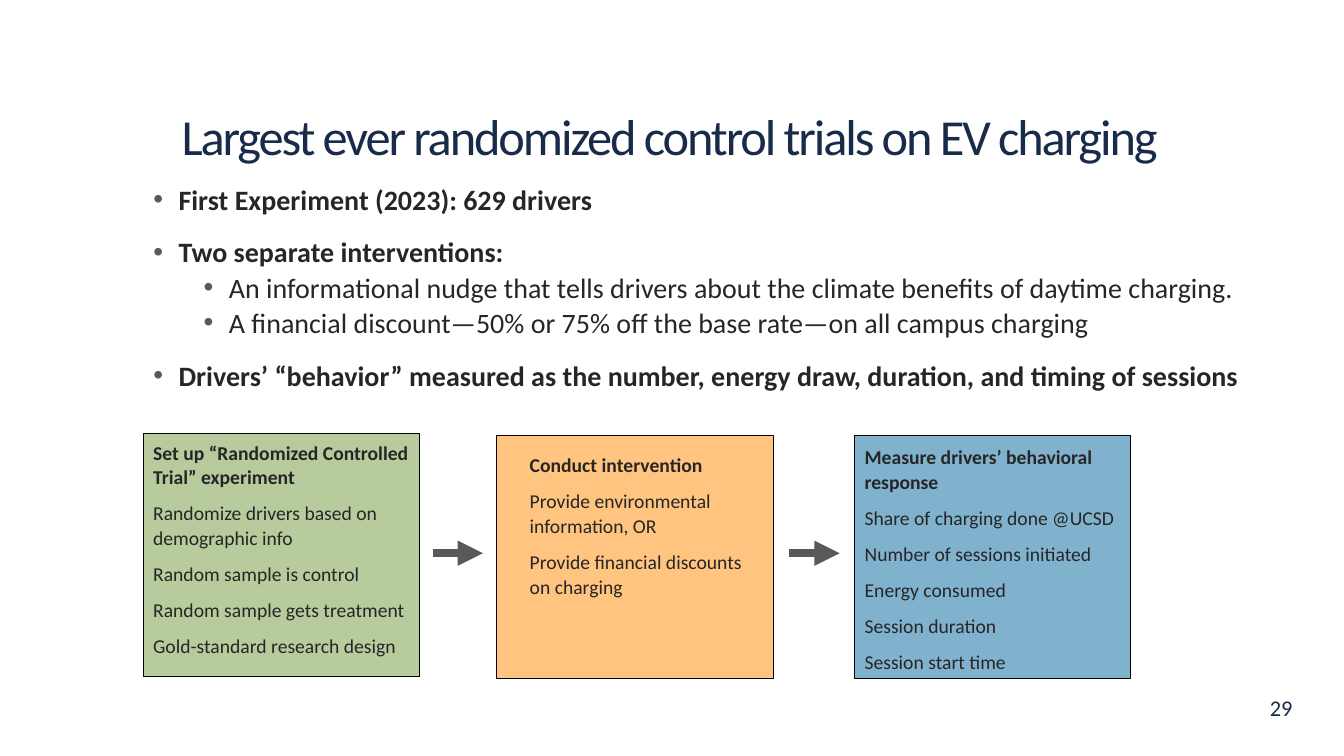
from lxml.etree import SubElement
from pptx import Presentation
from pptx.dml.color import RGBColor
from pptx.enum.shapes import MSO_CONNECTOR, MSO_SHAPE
from pptx.enum.text import MSO_ANCHOR, MSO_AUTO_SIZE, PP_ALIGN
from pptx.oxml.ns import qn
from pptx.util import Cm, Pt

NAVY = RGBColor(0x18, 0x2B, 0x49)
INK = RGBColor(0x26, 0x26, 0x26)
GRAY = RGBColor(0x59, 0x59, 0x59)
BLACK = RGBColor(0, 0, 0)
GREEN = RGBColor(0xB7, 0xCB, 0x9D)
ORANGE = RGBColor(0xFE, 0xC4, 0x80)
BLUE = RGBColor(0x80, 0xB1, 0xCD)

TITLE = "Largest ever randomized control trials on EV charging"
# Each point: level, bold, text
POINTS = [
    (0, True, "First Experiment (2023): 629 drivers"),
    (0, True, "Two separate interventions:"),
    (1, False, "An informational nudge that tells drivers about the climate "
               "benefits of daytime charging."),
    (1, False, "A financial discount—50% or 75% off the base rate—on all "
               "campus charging"),
    (0, True, "Drivers’ “behavior” measured as the number, energy draw, "
              "duration, and timing of sessions"),
]
CARD_W, CARD_H = 6.96, 6.12
# Each card: left, top, fill, text inset (x, y), text size, lines
CARDS = [
    (3.61, 10.92, GREEN, (0, 0.03), (CARD_W, 5.77), [
        "Set up “Randomized Controlled Trial” experiment",
        "Randomize drivers based on demographic info",
        "Random sample is control",
        "Random sample gets treatment",
        "Gold-standard research design"]),
    (12.52, 10.97, ORANGE, (0.58, 0.3), (6.12, 3.71), [
        "Conduct intervention",
        "Provide environmental information, OR",
        "Provide financial discounts on charging"]),
    (21.54, 10.97, BLUE, (0, 0.1), (CARD_W, 5.97), [
        "Measure drivers’ behavioral response",
        "Share of charging done @UCSD",
        "Number of sessions initiated",
        "Energy consumed",
        "Session duration",
        "Session start time"]),
]
ARROWS = [10.9, 19.89]
ARROW_Y, ARROW_W = 13.94, 1.27


def place(shape, left, top, width, height):
    shape.left, shape.top = Cm(left), Cm(top)
    shape.width, shape.height = Cm(width), Cm(height)


def write(para, text, size, color=INK, bold=False, align=PP_ALIGN.LEFT,
          line=1.0, before=0, after=0, track=0):
    """Fill a paragraph; track is letter spacing in points."""
    para.alignment = align
    para.line_spacing = line
    para.space_before, para.space_after = Pt(before), Pt(after)
    run = para.add_run()
    run.text = text
    font = run.font
    font.name, font.size, font.bold = "Calibri", Pt(size), bold
    font.color.rgb = color
    if track:
        run._r.get_or_add_rPr().set("spc", str(int(track * 100)))


def paras(frame, items):
    """Pair each item with a paragraph of the frame."""
    for i, item in enumerate(items):
        yield i, frame.paragraphs[0] if i == 0 else frame.add_paragraph(), item


def bullet(para, level):
    para.level = level
    props = para._p.get_or_add_pPr()
    props.set("marL", str(Cm(0.635 + 1.27 * level)))
    props.set("indent", str(-Cm(0.635)))
    tint = SubElement(props, qn("a:buClr"))
    SubElement(tint, qn("a:srgbClr")).set("val", str(GRAY))
    SubElement(props, qn("a:buFont")).set("typeface", "Arial")
    SubElement(props, qn("a:buChar")).set("char", "•")


def add_title(slide, *box):
    title = slide.shapes.title
    place(title, *box)
    frame = title.text_frame
    frame.auto_size = MSO_AUTO_SIZE.NONE
    frame.vertical_anchor = MSO_ANCHOR.MIDDLE
    write(frame.paragraphs[0], TITLE, 36, color=NAVY, line=0.9, track=-1.5)


def add_points(slide, *box):
    body = slide.placeholders[1]
    place(body, *box)
    frame = body.text_frame
    frame.auto_size = MSO_AUTO_SIZE.NONE
    for i, para, (level, bold, text) in paras(frame, POINTS):
        bullet(para, level)
        gap = 12.5 if i and level == 0 else 0
        write(para, text, 20, bold=bold, line=1.05, before=gap)


def add_card(slide, left, top, fill, inset, size, lines):
    card = slide.shapes.add_shape(MSO_SHAPE.RECTANGLE, Cm(left), Cm(top),
                                  Cm(CARD_W), Cm(CARD_H))
    card.shadow.inherit = False
    card.fill.solid()
    card.fill.fore_color.rgb = fill
    card.line.color.rgb = BLACK
    card.line.width = Pt(0.5)
    label = slide.shapes.add_textbox(Cm(left + inset[0]), Cm(top + inset[1]),
                                     Cm(size[0]), Cm(size[1]))
    frame = label.text_frame
    frame.word_wrap = True
    for i, para, text in paras(frame, lines):
        write(para, text, 14, bold=i == 0, line=1.05,
              before=4 if i else 0, after=4)


def add_arrow(slide, left, y, width):
    arrow = slide.shapes.add_connector(MSO_CONNECTOR.STRAIGHT, Cm(left), Cm(y),
                                       Cm(left + width), Cm(y))
    arrow.line.color.rgb = GRAY
    arrow.line.width = Pt(6)
    SubElement(arrow.line._get_or_add_ln(), qn("a:tailEnd")).set(
        "type", "triangle")
    SubElement(arrow._element.spPr, qn("a:effectLst"))


def add_number(slide, *box):
    label = slide.shapes.add_textbox(*map(Cm, box))
    frame = label.text_frame
    frame.word_wrap = True
    frame.vertical_anchor = MSO_ANCHOR.MIDDLE
    write(frame.paragraphs[0], "29", 16, color=NAVY, align=PP_ALIGN.RIGHT)


def main():
    deck = Presentation()
    deck.slide_width, deck.slide_height = Cm(33.87), Cm(19.05)
    slide = deck.slides.add_slide(deck.slide_layouts[1])
    add_title(slide, 4.32, 2.46, 25.22, 2.11)
    add_points(slide, 3.61, 4.42, 29.46, 5.54)
    for card in CARDS:
        add_card(slide, *card)
    for left in ARROWS:
        add_arrow(slide, left, ARROW_Y, ARROW_W)
    add_number(slide, 23.93, 17.32, 8.89, 1.02)
    deck.save("out.pptx")


if __name__ == "__main__":
    main()
